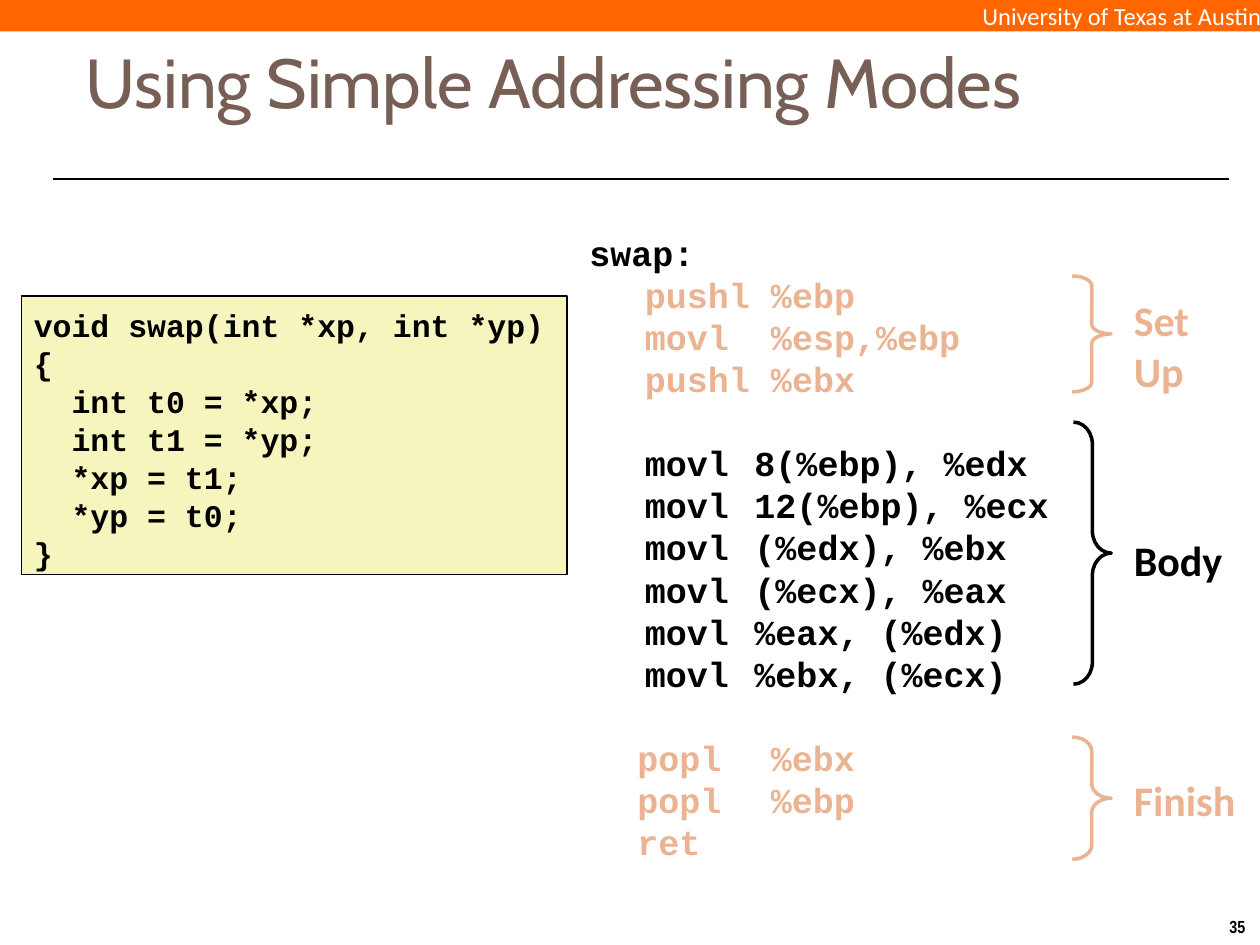
from pptx import Presentation
from pptx.dml.color import RGBColor
from pptx.enum.shapes import MSO_CONNECTOR, MSO_SHAPE
from pptx.enum.text import MSO_ANCHOR, PP_ALIGN
from pptx.oxml.ns import qn
from pptx.util import Inches, Pt
from lxml import etree

RECT, BRACE = MSO_SHAPE.RECTANGLE, MSO_SHAPE.RIGHT_BRACE
STRAIGHT = MSO_CONNECTOR.STRAIGHT
LEFT, RIGHT = PP_ALIGN.LEFT, PP_ALIGN.RIGHT
TOP, MIDDLE = MSO_ANCHOR.TOP, MSO_ANCHOR.MIDDLE
BLACK, WHITE, ORANGE = "000000", "FFFFFF", "FF6600"
BROWN, CREAM, FADED = "775F55", "F6F5BD", "EBB391"

SWAP_C = [
    "void swap(int *xp, int *yp)",
    "{",
    "  int t0 = *xp;",
    "  int t1 = *yp;",
    "  *xp = t1;",
    "  *yp = t0;",
    "}",
]
SET_UP = ["\tpushl %ebp", "\tmovl  %esp,%ebp", "\tpushl %ebx"]
BODY = [
    "\tmovl\t8(%ebp), %edx",
    "\tmovl\t12(%ebp), %ecx",
    "\tmovl\t(%edx), %ebx",
    "\tmovl\t(%ecx), %eax",
    "\tmovl\t%eax, (%edx)",
    "\tmovl\t%ebx, (%ecx)",
]
FINISH = ["\tpopl\t%ebx", "\tpopl\t%ebp", "\tret"]
SECTIONS = [
    (["swap:"], BLACK, (0.44, 1.31), 0),
    (SET_UP, FADED, (0.44, 1.31), 0),
    (BODY, BLACK, (0.44, 1.31), 24),
    (FINISH, FADED, (0.38, 1.44), 24),
]
BRACES = [
    ("Set\nUp", FADED, (8.51, 2.19, 0.31, 0.92), 0.25, (8.9, 2.29, 0.65, 0.91)),
    ("Body", BLACK, (8.52, 3.35, 0.3, 2.08), 0.585, (8.9, 4.19, 0.91, 0.5)),
    ("Finish", FADED, (8.51, 5.85, 0.31, 0.97), 0.362, (8.9, 6.1, 1.02, 0.5)),
]


def rgb(color):
    """Return the colour for a hex string."""
    return RGBColor.from_string(color)


def format_paragraph(p, font, size, color, bold=False, align=LEFT):
    """Set the alignment of a paragraph and the font of its runs."""
    p.alignment = align
    for r in p.runs:
        r.font.name = font
        r.font.size = Pt(size)
        r.font.bold = bold
        r.font.color.rgb = rgb(color)


def set_text(s, text, font, size, color, bold=False, align=LEFT, anchor=TOP, wrap=False):
    """Fill a shape with text in one format."""
    tf = s.text_frame
    tf.text = text
    tf.word_wrap = wrap
    tf.vertical_anchor = anchor
    for p in tf.paragraphs:
        format_paragraph(p, font, size, color, bold, align)


def add_text(slide, box, *args, **kwargs):
    """Add a text box with text in one format."""
    s = slide.shapes.add_textbox(*map(Inches, box))
    set_text(s, *args, **kwargs)


def add_box(slide, kind, box, fill=None, line=None, width=1):
    """Add a preset shape with an optional fill and outline."""
    s = slide.shapes.add_shape(kind, *map(Inches, box))
    s.shadow.inherit = False
    if fill:
        s.fill.solid()
        s.fill.fore_color.rgb = rgb(fill)
    else:
        s.fill.background()
    if line:
        s.line.color.rgb = rgb(line)
        s.line.width = Pt(width)
    else:
        s.line.fill.background()
    return s


def add_rule(slide, x1, x2, y):
    """Add the horizontal line below the title."""
    s = slide.shapes.add_connector(STRAIGHT, *map(Inches, (x1, y, x2, y)))
    s.line.color.rgb = rgb(BLACK)
    s.line.width = Pt(1.5)
    etree.SubElement(s._element.spPr, qn("a:effectLst"))


def add_tabs(p, stops):
    """Give a paragraph left tab stops at the given inches."""
    tabs = etree.SubElement(p._p.get_or_add_pPr(), qn("a:tabLst"))
    for stop in stops:
        etree.SubElement(tabs, qn("a:tab"), pos=str(Inches(stop)), algn="l")


def add_header(slide):
    """Add the orange band with the name of the university."""
    s = add_box(slide, RECT, (0, 0, 10.01, 0.25), ORANGE)
    set_text(s, "University of Texas at Austin", "Calibri", 14, WHITE,
             align=RIGHT, anchor=MIDDLE)
    tf = s.text_frame
    tf.margin_left = tf.margin_right = tf.margin_top = tf.margin_bottom = 0


def add_source(slide):
    """Add the framed C function."""
    s = add_box(slide, RECT, (0.17, 2.35, 4.33, 2.21), CREAM, BLACK)
    set_text(s, "\n".join(SWAP_C), "Courier New", 18, BLACK, bold=True, wrap=True)
    s.text_frame.margin_top = Inches(0.08)
    for p in s.text_frame.paragraphs:
        p.line_spacing = Pt(21.7)


def add_assembly(slide):
    """Add the assembly listing with its sections spaced apart."""
    tf = slide.shapes.add_textbox(*map(Inches, (4.58, 1.77, 4, 5.15))).text_frame
    tf.word_wrap = True
    tf.margin_top = Inches(0.07)
    p = tf.paragraphs[0]
    for lines, color, stops, gap in SECTIONS:
        for i, line in enumerate(lines):
            if p.text:
                p = tf.add_paragraph()
            p.text = line
            p.line_spacing = Pt(24)
            p.space_before = Pt(0 if i else gap)
            add_tabs(p, stops)
            format_paragraph(p, "Courier New", 20, color, bold=True)


def add_brace(slide, label, color, box, curve, label_box):
    """Add a right brace and its label."""
    s = add_box(slide, BRACE, box, line=color, width=2)
    s.adjustments[0] = curve
    s.adjustments[1] = 0.5
    add_text(slide, label_box, label, "Calibri", 24, color, bold=True)


def main():
    """Build the slide and save it."""
    prs = Presentation()
    prs.slide_width, prs.slide_height = Inches(10), Inches(7.5)
    slide = prs.slides.add_slide(prs.slide_layouts[6])
    add_header(slide)
    add_rule(slide, 0.42, 9.75, 1.42)
    add_text(slide, (9.66, 7.22, 0.34, 0.27), "35", "Arial Narrow", 10, BLACK, bold=True)
    add_text(slide, (0.58, 0.33, 8.38, 0.63), "Using Simple Addressing Modes",
             "Cabin", 39.6, BROWN, anchor=MIDDLE, wrap=True)
    add_source(slide)
    add_assembly(slide)
    for brace in BRACES:
        add_brace(slide, *brace)
    prs.save("out.pptx")


if __name__ == "__main__":
    main()
